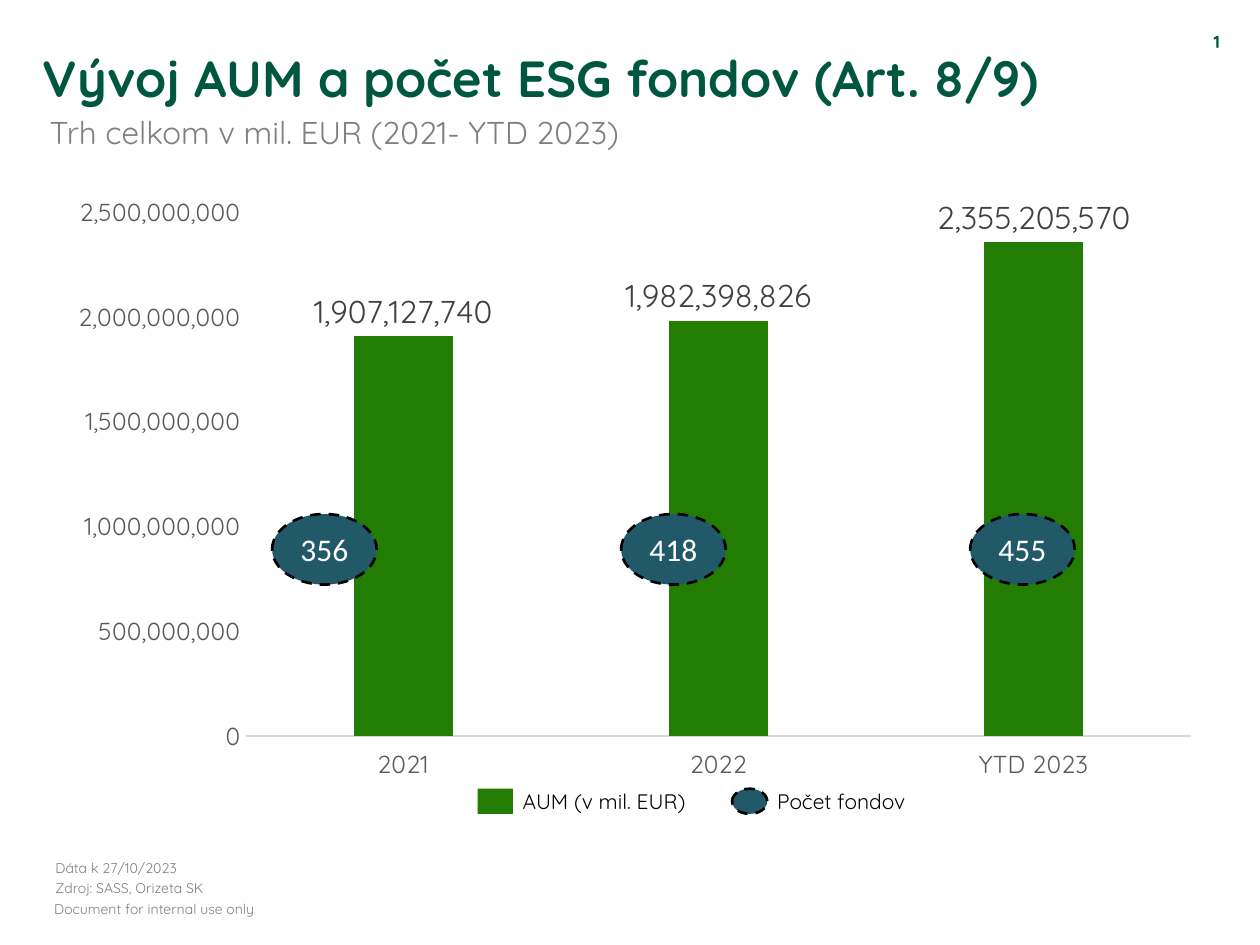
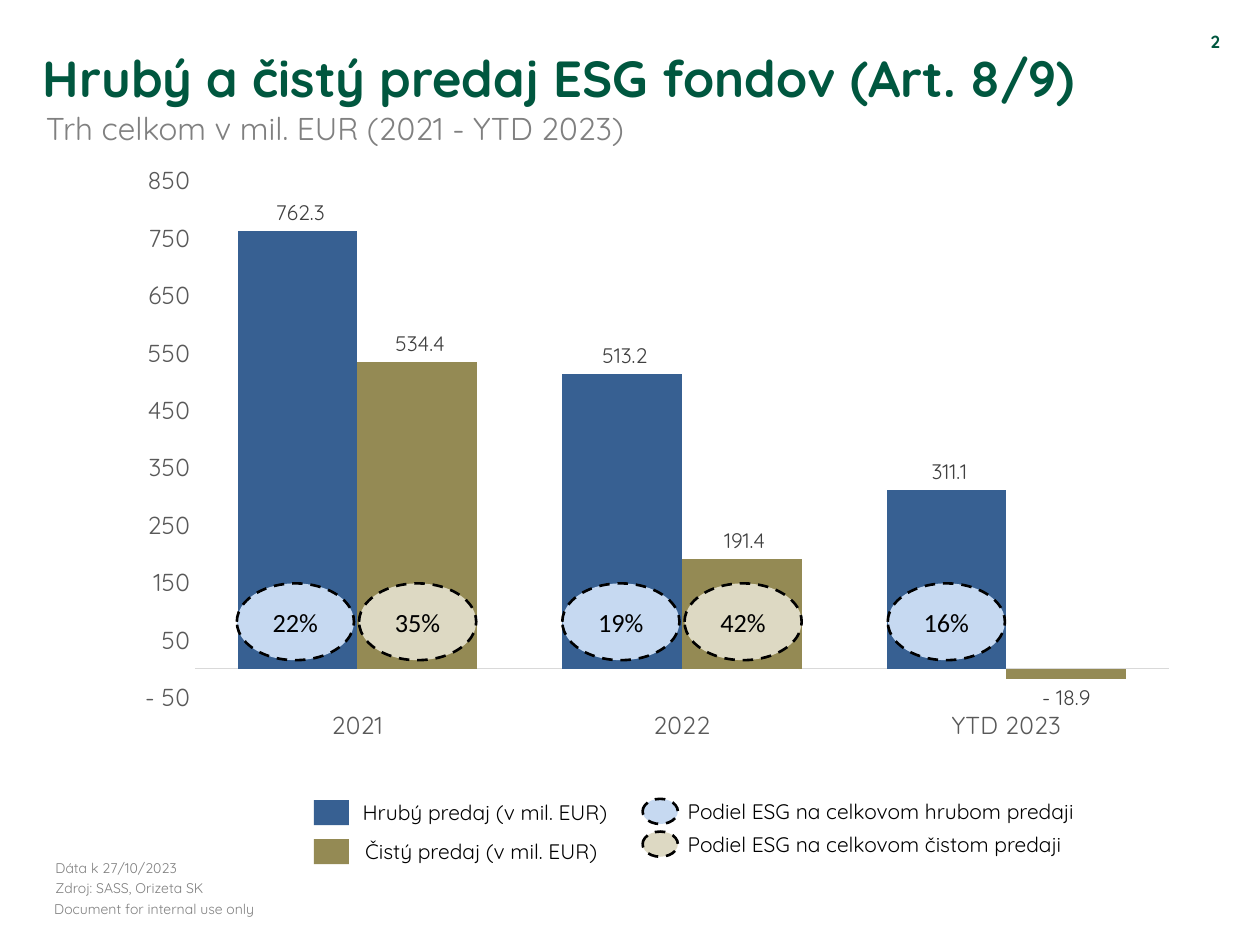
from dataclasses import dataclass

from lxml.etree import SubElement
from pptx import Presentation
from pptx.chart.data import CategoryChartData
from pptx.dml.color import RGBColor
from pptx.enum.chart import XL_CHART_TYPE as ChartType, XL_LABEL_POSITION as LabelPos
from pptx.enum.chart import XL_TICK_LABEL_POSITION as TickLabels, XL_TICK_MARK as Tick
from pptx.enum.dml import MSO_LINE_DASH_STYLE as Dash
from pptx.enum.shapes import MSO_AUTO_SHAPE_TYPE as Shape
from pptx.enum.text import MSO_ANCHOR as Anchor, MSO_AUTO_SIZE as AutoSize, PP_ALIGN as Align
from pptx.oxml.ns import qn
from pptx.util import Inches, Pt


@dataclass(frozen=True)
class Theme:
    font: str = "Quicksand"
    badge_font: str = "Calibri"
    heading: str = "00573F"
    muted: str = "808080"
    ink: str = "000000"
    white: str = "FFFFFF"
    axis_text: str = "595959"
    axis_line: str = "D9D9D9"
    value_text: str = "404040"
    green: str = "237D03"
    teal: str = "215968"
    blue: str = "376092"
    olive: str = "948A54"
    pale_blue: str = "C6D9F1"
    pale_olive: str = "DDD9C3"
    title_size: int = 29
    subtitle_size: int = 18
    axis_size: int = 14
    legend_size: int = 12
    number_size: int = 10
    note_size: int = 8


T = Theme()

# Content: boxes are left, top, width, height on a grid of 100 columns by 75 rows
COLUMNS, ROWS = 100, 75
WIDTH, HEIGHT = Inches(10), Inches(7.5)
PERIODS = ["2021", "2022", "YTD 2023"]
SOURCE_NOTE = ["Dáta k 27/10/2023", "Zdroj: SASS, Orizeta SK"]
USE_NOTE = ["Document for internal use only"]
SWATCH = (2.8, 2)

PAGES = [
    dict(
        title="Vývoj AUM a počet ESG fondov (Art. 8/9)",
        subtitle="Trh celkom v mil. EUR (2021- YTD 2023)",
        subtitle_box=(2.7, 8.5, 47.7, 4),
        chart=dict(
            box=(4.4, 14.6, 92, 47.7), plot=(0.164, 0.047, 0.816, 0.872),
            gap=219, overlap=-27, scale=(0, 2_500_000_000, 500_000_000),
            axis_format="#,##0", value_format="#,##0", value_size=18,
            series=[("AUM (v mil. EUR)", T.green, [1907127740, 1982398826, 2355205570])],
        ),
        badges=dict(
            start=(21.6, 40.8), size=(8.3, 5.6), period_step=27.7, series_step=0,
            text_size=18, text_color=T.white,
            series=[(T.teal, ["356", "418", "455"])],
        ),
        # shape, colour, label, swatch left and top, label offset and width
        legend=[
            (Shape.RECTANGLE, T.green, "AUM (v mil. EUR)", 37.9, 62.6, 2.6, 15.2),
            (Shape.OVAL, T.teal, "Počet fondov", 58.1, 62.6, 2.6, 13.2),
        ],
    ),
    dict(
        title="Hrubý a čistý predaj ESG fondov (Art. 8/9)",
        subtitle="Trh celkom v mil. EUR (2021 - YTD 2023)",
        subtitle_box=(2.3, 8.2, 48.6, 4),
        chart=dict(
            box=(3.4, 12.5, 90.9, 50.9), plot=(0.133, 0.036, 0.85, 0.806),
            gap=71, overlap=0, scale=(-50, 850, 100),
            axis_format="#\\ ##0", value_format="#\\ ##0.0", value_size=12,
            series=[
                ("Hrubý predaj (v mil. EUR)", T.blue, [762.3, 513.2, 311.1]),
                ("Čistý predaj (v mil. EUR)", T.olive, [534.4, 191.4, -18.9]),
            ],
        ),
        badges=dict(
            start=(18.8, 46.3), size=(9.3, 6.1), period_step=25.83, series_step=9.7,
            text_size=15, text_color=T.ink,
            series=[(T.pale_blue, ["22%", "19%", "16%"]), (T.pale_olive, ["35%", "42%"])],
        ),
        legend=[
            (Shape.RECTANGLE, T.blue, "Hrubý predaj (v mil. EUR)", 24.9, 63.5, 2.9, 21.9),
            (Shape.RECTANGLE, T.olive, "Čistý predaj (v mil. EUR)", 24.9, 66.6, 3.1, 21),
            (Shape.OVAL, T.pale_blue, "Podiel ESG na celkovom hrubom predaji", 51, 63.4, 2.6, 35.8),
            (Shape.OVAL, T.pale_olive, "Podiel ESG na celkovom čistom predaji", 51, 66, 2.6, 33.9),
        ],
    ),
]


def place(box):
    left, top, width, height = box
    return (round(left * WIDTH / COLUMNS), round(top * HEIGHT / ROWS),
            round(width * WIDTH / COLUMNS), round(height * HEIGHT / ROWS))


def style_font(font, size, color, name=T.font, bold=False):
    font.name, font.size, font.bold = name, Pt(size), bold
    font.color.rgb = RGBColor.from_string(color)


def write(shape, lines, size, color, name=T.font, bold=False, align=Align.LEFT,
          anchor=Anchor.TOP, wrap=True, inset=None, gap=0):
    frame = shape.text_frame
    frame.word_wrap = wrap
    frame.auto_size = AutoSize.NONE if wrap else AutoSize.SHAPE_TO_FIT_TEXT
    frame.vertical_anchor = anchor
    if inset is not None:
        frame.margin_left = frame.margin_right = Inches(inset)
        frame.margin_top = frame.margin_bottom = Inches(inset)
    for index, line in enumerate(lines):
        paragraph = frame.paragraphs[0] if index == 0 else frame.add_paragraph()
        paragraph.alignment = align
        if index:
            paragraph.space_before = Pt(gap)
        run = paragraph.add_run()
        run.text = line
        style_font(run.font, size, color, name, bold)


def add_text(slide, box, lines, **style):
    write(slide.shapes.add_textbox(*place(box)), lines, **style)


def add_mark(slide, kind, box, color):
    """Filled shape; ovals carry the dashed outline."""
    mark = slide.shapes.add_shape(kind, *place(box))
    mark.shadow.inherit = False
    mark.fill.solid()
    mark.fill.fore_color.rgb = RGBColor.from_string(color)
    if kind == Shape.OVAL:
        mark.line.color.rgb = RGBColor.from_string(T.ink)
        mark.line.width = Pt(1.5)
        mark.line.dash_style = Dash.DASH
    else:
        mark.line.fill.background()
    return mark


def fix_plot_area(chart, shares):
    plot_area = chart._chartSpace.chart.plotArea
    layout = plot_area.find(qn("c:layout"))
    if layout is None:
        layout = SubElement(plot_area, qn("c:layout"))
        plot_area.insert(0, layout)
    manual = SubElement(layout, qn("c:manualLayout"))
    settings = [("layoutTarget", "inner"), ("xMode", "edge"), ("yMode", "edge"),
                *zip("xywh", shares)]
    for tag, value in settings:
        SubElement(manual, qn(f"c:{tag}")).set("val", str(value))


def add_columns(slide, box, plot, gap, overlap, scale, axis_format, value_format,
                value_size, series):
    data = CategoryChartData()
    data.categories = PERIODS
    for name, _, values in series:
        data.add_series(name, values)
    chart = slide.shapes.add_chart(ChartType.COLUMN_CLUSTERED, *place(box), data).chart
    chart.has_title = chart.has_legend = False
    style_font(chart.font, T.number_size, T.ink)
    fix_plot_area(chart, plot)

    # Axes
    for axis in (chart.category_axis, chart.value_axis):
        axis.major_tick_mark = axis.minor_tick_mark = Tick.NONE
        axis.has_major_gridlines = False
        style_font(axis.tick_labels.font, T.axis_size, T.axis_text)
    periods, amounts = chart.category_axis, chart.value_axis
    periods.tick_label_position = TickLabels.LOW
    periods.format.line.color.rgb = RGBColor.from_string(T.axis_line)
    periods.format.line.width = Pt(0.75)
    amounts.format.line.fill.background()
    amounts.minimum_scale, amounts.maximum_scale, amounts.major_unit = scale
    amounts.tick_labels.number_format = axis_format
    amounts.tick_labels.number_format_is_linked = False

    # Columns and their values
    columns = chart.plots[0]
    columns.gap_width, columns.overlap = gap, overlap
    columns.vary_by_categories = False
    for column, (_, color, _) in zip(columns.series, series):
        column.invert_if_negative = False
        column.format.fill.solid()
        column.format.fill.fore_color.rgb = RGBColor.from_string(color)
        labels = column.data_labels
        labels.show_value = True
        labels.position = LabelPos.OUTSIDE_END
        labels.number_format = value_format
        labels.number_format_is_linked = False
        style_font(labels.font, value_size, T.value_text)


def add_badges(slide, start, size, period_step, series_step, text_size, text_color, series):
    left, top = start
    for row, (color, labels) in enumerate(series):
        for period, label in enumerate(labels):
            x = left + period * period_step + row * series_step
            badge = add_mark(slide, Shape.OVAL, (x, top, *size), color)
            write(badge, [label], size=text_size, color=text_color, name=T.badge_font,
                  align=Align.CENTER, anchor=Anchor.MIDDLE, inset=0)


def add_legend(slide, entries):
    for kind, color, label, left, top, offset, width in entries:
        add_mark(slide, kind, (left, top, *SWATCH), color)
        add_text(slide, (left + offset, top - 0.5, width, 3), [label],
                 size=T.legend_size, color=T.ink, wrap=False)


def add_frame(slide, number, title, subtitle, subtitle_box):
    """Title, subtitle, page number and footers common to all slides."""
    heading = slide.shapes.title
    heading.left, heading.top, heading.width, heading.height = place((3.4, 3.7, 87.5, 5.4))
    write(heading, [title], size=T.title_size, color=T.heading, bold=True, inset=0)
    add_text(slide, subtitle_box, [subtitle], size=T.subtitle_size, color=T.muted,
             align=Align.CENTER, wrap=False)
    add_text(slide, (93.3, 2, 4.5, 4), [str(number)], size=T.number_size,
             color=T.heading, bold=True, align=Align.RIGHT)
    for box, lines in (((4.4, 66.4, 20.2, 4.7), SOURCE_NOTE), ((4.3, 70.7, 55.4, 2.1), USE_NOTE)):
        add_text(slide, box, lines, size=T.note_size, color=T.muted,
                 anchor=Anchor.BOTTOM, inset=0, gap=1.6)


def main():
    deck = Presentation()
    deck.slide_width, deck.slide_height = WIDTH, HEIGHT
    title_only = deck.slide_layouts[5]
    for number, page in enumerate(PAGES, start=1):
        slide = deck.slides.add_slide(title_only)
        add_frame(slide, number, page["title"], page["subtitle"], page["subtitle_box"])
        add_columns(slide, **page["chart"])
        add_badges(slide, **page["badges"])
        add_legend(slide, page["legend"])
    deck.save("out.pptx")


if __name__ == "__main__":
    main()
